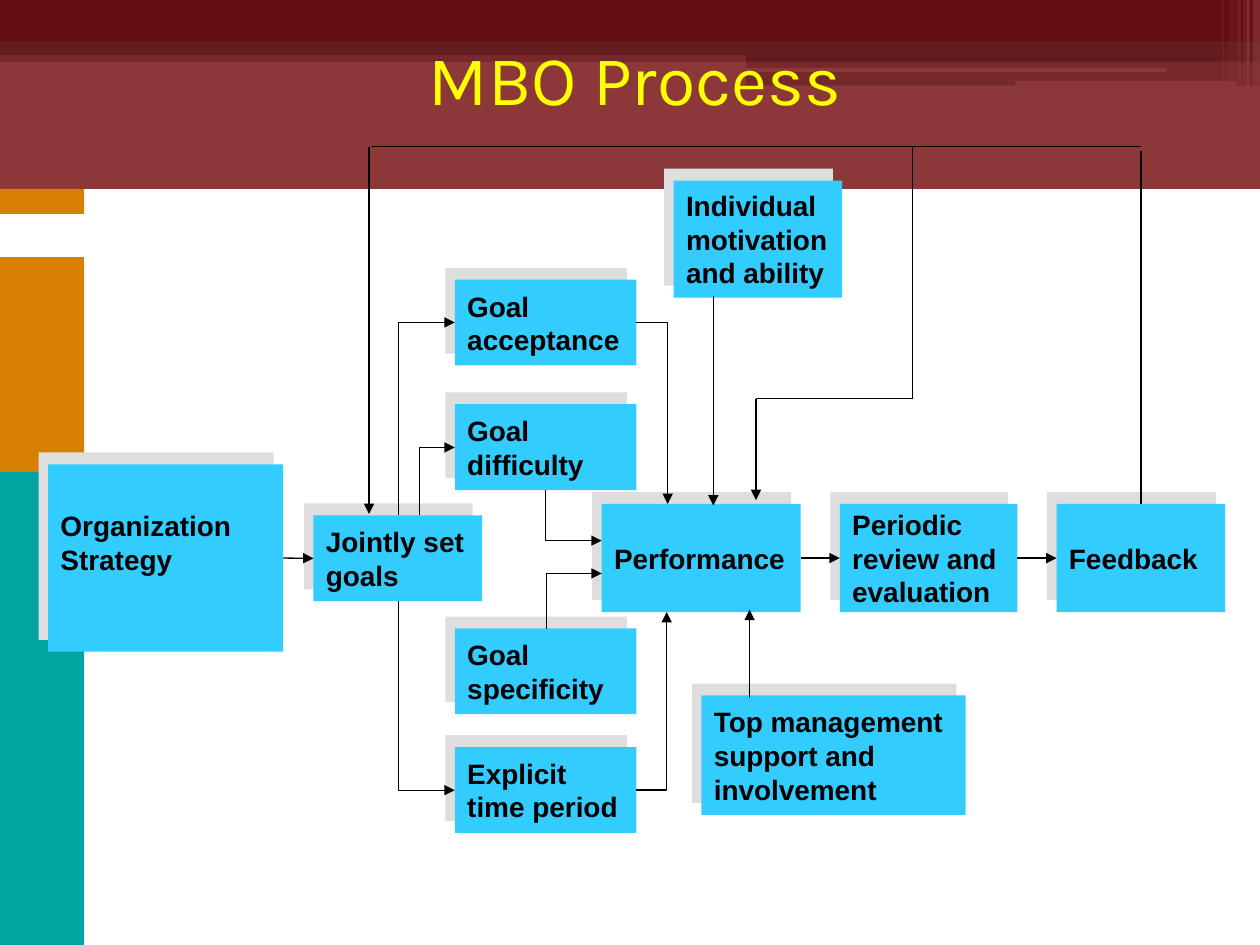
from lxml.etree import SubElement
from pptx import Presentation
from pptx.dml.color import RGBColor
from pptx.enum.shapes import MSO_CONNECTOR, MSO_SHAPE
from pptx.enum.text import MSO_ANCHOR, PP_ALIGN
from pptx.oxml.ns import qn
from pptx.util import Cm, Pt

BANNER = [
    (0, 1.02, 25.4, 0.23, "438086", 50),
    (0, 0, 25.4, 0.86, "424456", 100),
    (0, 0.86, 25.4, 0.25, "438086", 100),
    (15.04, 0.99, 10.36, 0.25, "438086", 100),
    (15.04, 1.22, 10.36, 0.51, "438086", 50),
]
STREAKS = [(15.01, 1.37, 8.51, 0.08), (20.47, 1.63, 4.45, 0.1)]
STRIPES = [
    (25.25, 0, 0.15, 1.73, "FFFFFF", 65),
    (25.12, 0, 0.08, 1.73, "FFFFFF", 65),
    (25.07, 0, 0.03, 1.73, "FFFFFF", 60),
    (24.94, 0, 0.08, 1.73, "FFFFFF", 40),
    (24.77, 0, 0.15, 1.63, "FFFFFF", 20),
    (24.64, 0, 0.03, 1.63, "FFFFFF", 30),
]
PANELS = [
    (1.7, 3.81, 23.7, 15.24, "FFFFFF", 100),
    (0, 0, 25.4, 3.81, "6C0000", 78),
    (0, 3.81, 1.7, 5.71, "D67F00", 100),
    (0, 9.52, 1.7, 9.53, "00A4A0", 100),
    (0, 4.32, 12.75, 0.86, "FFFFFF", 100),
]
STEPS = [
    ("Organization Strategy", 0.97, 9.36, 4.74, 3.78),
    ("Jointly set goals", 6.32, 10.39, 3.4, 1.73),
    ("Goal acceptance", 9.17, 5.64, 3.66, 1.73),
    ("Goal difficulty", 9.17, 8.15, 3.66, 1.73),
    ("Goal specificity", 9.17, 12.67, 3.66, 1.73),
    ("Explicit time period", 9.17, 15.06, 3.66, 1.73),
    ("Individual motivation and ability", 13.58, 3.64, 3.4, 2.36),
    ("Top management support and involvement", 14.14, 14.02, 5.33, 2.41),
    ("Performance", 12.13, 10.16, 4.01, 2.18),
    ("Periodic review and evaluation", 16.93, 10.16, 3.58, 2.18),
    ("Feedback", 21.3, 10.16, 3.4, 2.18),
]
SEQUENCES = [
    ("Organization Strategy", "Jointly set goals"),
    ("Performance", "Periodic review and evaluation"),
    ("Periodic review and evaluation", "Feedback"),
]
VERTICAL_FIRST = [
    (8.03, 10.39, 9.17, 6.5),
    (8.46, 10.39, 9.17, 9.02),
    (8.03, 12.12, 9.17, 15.93),
    (11.02, 12.67, 12.13, 11.56),
    (11, 9.87, 12.13, 10.9),
]
HORIZONTAL_FIRST = [(12.83, 15.93, 13.44, 12.34), (12.83, 6.5, 13.46, 10.16)]
ARROWS = [
    (15.11, 14.07, 15.11, 12.29),
    (14.38, 5.97, 14.38, 10.19),
    (7.44, 2.97, 7.44, 10.36),
    (15.24, 8.04, 15.24, 10.08),
]
FEEDBACK_LINES = [
    (7.49, 2.95, 23, 2.95),
    (15.24, 8.04, 18.39, 8.04),
    (18.39, 8.04, 18.39, 2.95),
]
SHADOW_OFFSET = (0.19, 0.24)


def color(value):
    return RGBColor.from_string(value)


def add_block(shapes, left, top, width, height, fill, opacity=100, kind=MSO_SHAPE.RECTANGLE):
    block = shapes.add_shape(kind, Cm(left), Cm(top), Cm(width), Cm(height))
    block.shadow.inherit = False
    block.line.fill.background()
    block.fill.solid()
    block.fill.fore_color.rgb = color(fill)
    if opacity < 100:
        tint = block.fill._xPr.find(qn("a:solidFill"))[0]
        SubElement(tint, qn("a:alpha"), val=str(opacity * 1000))
    return block


def format_text(frame, text, font, size, fill, align, bold=False):
    frame.word_wrap = True
    frame.text = text
    paragraph = frame.paragraphs[0]
    paragraph.alignment = align
    span = paragraph.runs[0]
    span.font.name = font
    span.font.size = Pt(size)
    span.font.bold = bold
    span.font.color.rgb = color(fill)


def add_title(page, text):
    box = page.shapes.add_textbox(Cm(1.47), Cm(0.33), Cm(22.66), Cm(3.99))
    frame = box.text_frame
    frame.vertical_anchor = MSO_ANCHOR.TOP
    frame.margin_top = Cm(0.38)
    format_text(frame, text, "Karla", 40, "FFFF00", PP_ALIGN.CENTER)


def add_step(page, text, left, top, width, height):
    group = page.shapes.add_group_shape()
    across, up = SHADOW_OFFSET
    add_block(group.shapes, left - across, top - up, width, height, "DEDEDE")
    box = add_block(group.shapes, left, top, width, height, "33CCFF")
    box.text_frame.vertical_anchor = MSO_ANCHOR.MIDDLE
    format_text(box.text_frame, text, "Arial", 16, "000000", PP_ALIGN.LEFT, True)
    return box


def add_line(page, start_x, start_y, end_x, end_y, arrow=True, kind=MSO_CONNECTOR.STRAIGHT):
    line = page.shapes.add_connector(kind, Cm(start_x), Cm(start_y), Cm(end_x), Cm(end_y))
    line.line.color.rgb = color("000000")
    line.line.width = Pt(0.75)
    properties = line._element.spPr
    if arrow:
        SubElement(properties.find(qn("a:ln")), qn("a:tailEnd"), type="triangle")
    SubElement(properties, qn("a:effectLst"))
    return line


def add_corner(page, start_x, start_y, end_x, end_y):
    line = add_line(page, start_x, start_y, end_x, end_y, kind=MSO_CONNECTOR.ELBOW)
    line._element.spPr.find(qn("a:prstGeom")).set("prst", "bentConnector2")
    return line


def add_turned_corner(page, start_x, start_y, end_x, end_y):
    middle_x, middle_y = (start_x + end_x) / 2, (start_y + end_y) / 2
    half_x, half_y = (end_x - start_x) / 2, (end_y - start_y) / 2
    line = add_corner(page, middle_x + half_y, middle_y - half_x,
                      middle_x - half_y, middle_y + half_x)
    line._element.spPr.find(qn("a:xfrm")).set("rot", str(270 * 60000))


def join(page, first, second):
    line = add_line(page, 0, 0, 1, 1)
    line.begin_connect(first, 3)
    line.end_connect(second, 1)


def add_background(page):
    for bar in BANNER:
        add_block(page.shapes, *bar)
    for streak in STREAKS:
        add_block(page.shapes, *streak, "FFFFFF", kind=MSO_SHAPE.ROUNDED_RECTANGLE)
    for bar in STRIPES + PANELS:
        add_block(page.shapes, *bar)


def main():
    deck = Presentation()
    deck.slide_width, deck.slide_height = Cm(25.4), Cm(19.05)
    page = deck.slides.add_slide(deck.slide_layouts[6])
    add_background(page)
    add_title(page, "MBO Process")

    boxes = {step[0]: add_step(page, *step) for step in STEPS}
    boxes["Organization Strategy"].text_frame.margin_bottom = Cm(0.77)

    for first, second in SEQUENCES:
        join(page, boxes[first], boxes[second])
    for route in VERTICAL_FIRST:
        add_turned_corner(page, *route)
    for route in HORIZONTAL_FIRST:
        add_corner(page, *route)
    for route in ARROWS:
        add_line(page, *route)
    for route in FEEDBACK_LINES:
        add_line(page, *route, arrow=False)
    riser = add_line(page, 23, 3.05, 23, 10.16, arrow=False)
    riser.end_connect(boxes["Feedback"], 0)
    deck.save("out.pptx")


if __name__ == "__main__":
    main()
